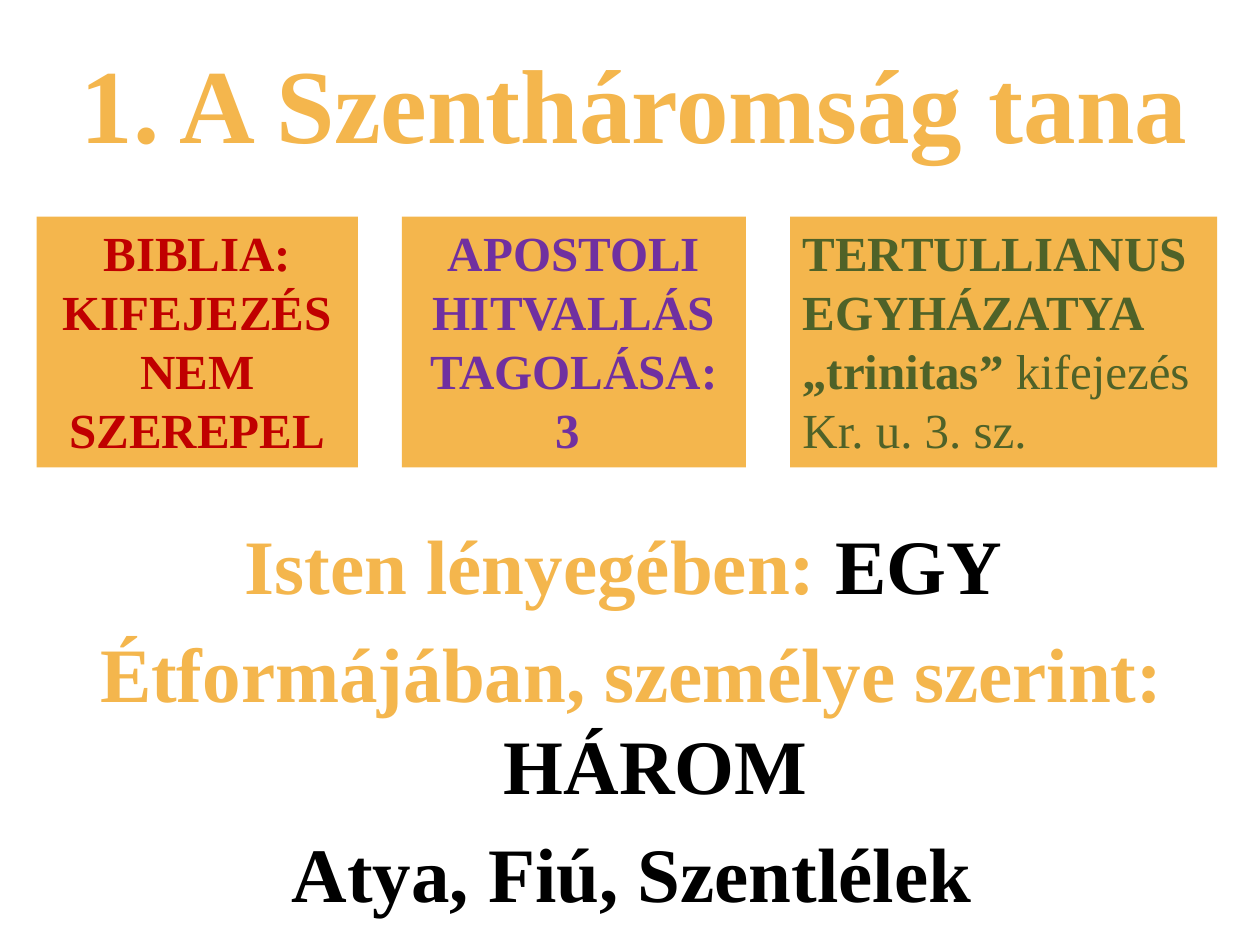
from pptx import Presentation
from pptx.dml.color import RGBColor
from pptx.enum.shapes import MSO_SHAPE
from pptx.enum.text import MSO_ANCHOR, MSO_AUTO_SIZE, PP_ALIGN
from pptx.oxml.xmlchemy import OxmlElement
from pptx.util import Inches, Pt

GOLD = RGBColor(0xF4, 0xB6, 0x4D)
BLACK = RGBColor(0, 0, 0)
RED = RGBColor(0xC0, 0, 0)
PURPLE = RGBColor(0x70, 0x30, 0xA0)
GREEN = RGBColor(0x4F, 0x62, 0x28)
FONT = "Times New Roman"

BOX_TOP, BOX_HEIGHT = 1.72, 1.99
BOX_LEFT, BOX_GAP = 0.29, 0.35


def place(shape, left, top, width, height):
    shape.left, shape.top = Inches(left), Inches(top)
    shape.width, shape.height = Inches(width), Inches(height)


def add_run(paragraph, text, size, color, bold=True):
    run = paragraph.add_run()
    run.text = text
    run.font.name = FONT
    run.font.size = Pt(size)
    run.font.bold = bold
    run.font.color.rgb = color


def write(frame, paragraphs, align=PP_ALIGN.CENTER, **run_format):
    """Fill a frame; each paragraph is a list of (text, overriding format) runs."""
    frame.word_wrap = True
    for index, runs in enumerate(paragraphs):
        paragraph = frame.add_paragraph() if index else frame.paragraphs[0]
        paragraph.alignment = align
        for text, overrides in runs:
            add_run(paragraph, text, **{**run_format, **overrides})


def fill_title(title, left, top, width, height):
    place(title, left, top, width, height)
    frame = title.text_frame
    frame.auto_size = MSO_AUTO_SIZE.NONE
    frame.vertical_anchor = MSO_ANCHOR.MIDDLE
    write(frame, [[("1. A Szentháromság tana", {})]], size=60, color=GOLD)


def add_box(slide, left, top, width, height, paragraphs, color, align):
    box = slide.shapes.add_shape(
        MSO_SHAPE.RECTANGLE, Inches(left), Inches(top), Inches(width), Inches(height))
    box.shadow.inherit = False
    box.fill.solid()
    box.fill.fore_color.rgb = GOLD
    box.line.fill.background()
    box.text_frame.vertical_anchor = MSO_ANCHOR.TOP
    write(box.text_frame, paragraphs, align=align, size=28, color=color)


def add_box_row(slide, left, top, height, gap):
    boxes = [
        (2.55, RED, PP_ALIGN.CENTER, [[("BIBLIA: KIFEJEZÉS NEM SZEREPEL", {})]]),
        (2.73, PURPLE, PP_ALIGN.CENTER,
         [[("APOSTOLI HITVALLÁS", {})], [("TAGOLÁSA: 3 ", {})]]),
        (3.39, GREEN, PP_ALIGN.LEFT,
         [[("TERTULLIANUS EGYHÁZATYA", {})],
          [("„trinitas” ", {}), ("kifejezés Kr. u. 3. sz.", {"bold": False})]]),
    ]
    for width, color, align, paragraphs in boxes:
        add_box(slide, left, top, width, height, paragraphs, color, align)
        left += width + gap


def fill_body(body, left, top, width, height):
    place(body, left, top, width, height)
    frame = body.text_frame
    frame.auto_size = MSO_AUTO_SIZE.NONE
    gold = {"color": GOLD}
    write(frame, [
        [("Isten lényegében: ", gold), ("EGY ", {})],
        [("Étformájában, személye szerint: ", gold), ("HÁROM", {})],
        [("Atya, Fiú, Szentlélek", {})],
    ], size=44, color=BLACK)
    for paragraph in frame.paragraphs:
        paragraph.space_before = Pt(8.8)
        properties = paragraph._p.get_or_add_pPr()
        properties.set("marL", str(Inches(0.38)))
        properties.set("indent", str(Inches(-0.38)))
        properties.append(OxmlElement("a:buNone"))


def main():
    presentation = Presentation()
    presentation.slide_width, presentation.slide_height = Inches(10), Inches(7.5)
    slide = presentation.slides.add_slide(presentation.slide_layouts[1])
    fill_title(slide.shapes.title, 0.03, 0, 10, 1.61)
    add_box_row(slide, BOX_LEFT, BOX_TOP, BOX_HEIGHT, BOX_GAP)
    fill_body(slide.placeholders[1], 0.03, 4.06, 9.97, 3.31)
    presentation.save("out.pptx")


if __name__ == "__main__":
    main()
